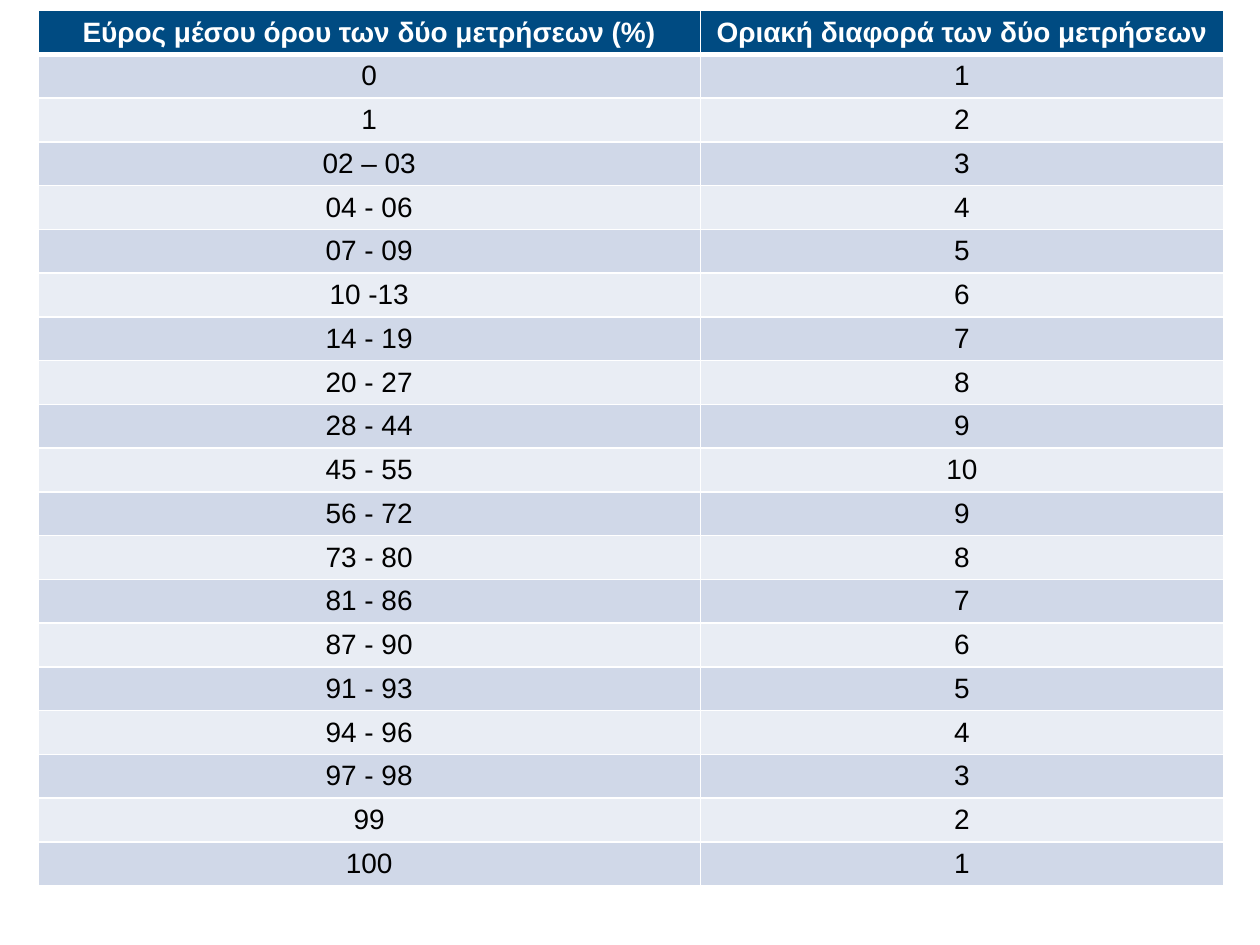
from lxml.etree import SubElement
from pptx import Presentation
from pptx.dml.color import RGBColor
from pptx.enum.text import MSO_ANCHOR, PP_ALIGN
from pptx.oxml.ns import qn
from pptx.util import Pt

COLORS = {
    "header": "004B82",
    "odd": "D0D8E8",
    "even": "E9EDF4",
    "border": "FFFFFF",
    "header_text": "FFFFFF",
    "body_text": "000000",
}

HEADERS = ("Εύρος μέσου όρου των δύο μετρήσεων (%)",
           "Οριακή διαφορά των δύο μετρήσεων")
MEAN_RANGES = (
    "0", "1", "02 – 03", "04 - 06", "07 - 09", "10 -13", "14 - 19",
    "20 - 27", "28 - 44", "45 - 55", "56 - 72", "73 - 80", "81 - 86",
    "87 - 90", "91 - 93", "94 - 96", "97 - 98", "99", "100",
)
# The limit rises to 10 at the middle range and falls back to 1.
LIMITS = [*range(1, 11), *range(9, 0, -1)]
ROWS = [HEADERS, *zip(MEAN_RANGES, map(str, LIMITS))]


def set_borders(cell, bottom_width):
    """Draw 1 pt borders round a cell, with its own width at the bottom."""
    properties = cell._tc.get_or_add_tcPr()
    for side, width in (("L", 1), ("R", 1), ("T", 1), ("B", bottom_width)):
        line = SubElement(properties, qn(f"a:ln{side}"), w=str(Pt(width)))
        line_fill = SubElement(line, qn("a:solidFill"))
        SubElement(line_fill, qn("a:srgbClr"), val=COLORS["border"])


prs = Presentation()
prs.slide_width, prs.slide_height = Pt(720), Pt(540)
slide = prs.slides.add_slide(prs.slide_layouts[6])

limits_frame = slide.shapes.add_table(
    len(ROWS), len(HEADERS), Pt(21.6), Pt(6), Pt(677.5), Pt(528))
limits_table = limits_frame.table
for column, width in zip(limits_table.columns, (378.7, 298.8)):
    column.width = Pt(width)
for row in limits_table.rows:
    row.height = Pt(19.5)
limits_frame.height = Pt(528)

for row_index, texts in enumerate(ROWS):
    is_header = row_index == 0
    band = "header" if is_header else "odd" if row_index % 2 else "even"
    for column_index, text in enumerate(texts):
        cell = limits_table.cell(row_index, column_index)
        set_borders(cell, 3 if row_index == 0 else 1)
        cell.fill.solid()
        cell.fill.fore_color.rgb = RGBColor.from_string(COLORS[band])
        cell.vertical_anchor = MSO_ANCHOR.MIDDLE if is_header else MSO_ANCHOR.TOP
        cell.text_frame.text = text
        paragraph = cell.text_frame.paragraphs[0]
        paragraph.alignment = PP_ALIGN.CENTER
        font = paragraph.runs[0].font
        font.name, font.size, font.bold = "Arial", Pt(16), is_header
        font.color.rgb = RGBColor.from_string(
            COLORS["header_text" if is_header else "body_text"])

prs.save("out.pptx")
